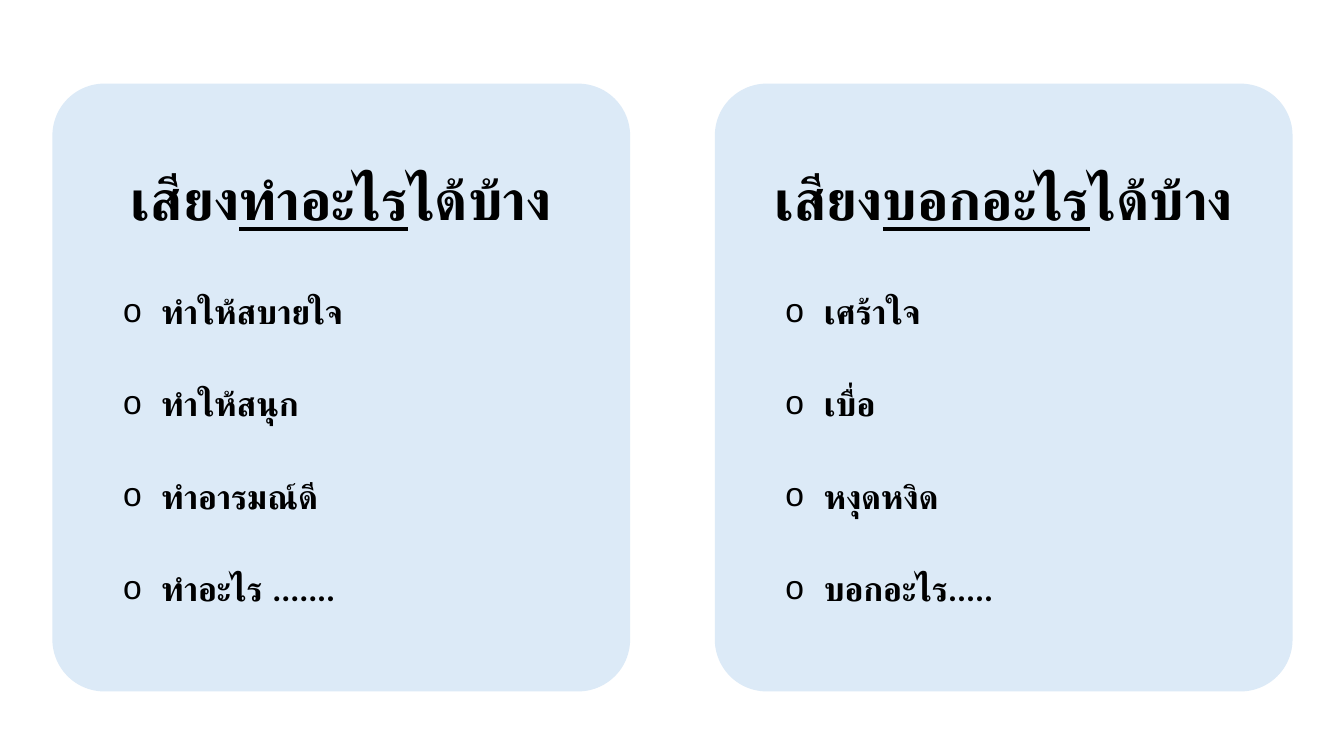
from dataclasses import dataclass

from lxml.etree import SubElement
from pptx import Presentation
from pptx.dml.color import RGBColor
from pptx.enum.shapes import MSO_SHAPE as Preset
from pptx.enum.text import MSO_ANCHOR as Anchor, MSO_AUTO_SIZE as AutoSize, PP_ALIGN as Align
from pptx.oxml.ns import qn
from pptx.util import Inches, Pt


@dataclass(frozen=True)
class Theme:
    card: RGBColor = RGBColor(0xDC, 0xEA, 0xF7)
    ink: RGBColor = RGBColor(0, 0, 0)
    font: str = "Calibri"
    heading_size: Pt = Pt(40)
    item_size: Pt = Pt(24)


THEME = Theme()
CARD_TOP, CARD_WIDTH, CARD_HEIGHT = Inches(0.83), Inches(5.73), Inches(6.03)
LIST_INSET = Inches(0.6)
HANGING = Inches(0.38)

COLUMNS = (
    {
        "left": Inches(0.52),
        "heading_idx": 0,
        "list_idx": 2,
        "heading": ("เสียง", "ทำอะไร", "ได้บ้าง"),
        "items": ("ทำให้สบายใจ", "ทำให้สนุก", "ทำอารมณ์ดี", "ทำอะไร ......."),
    },
    {
        "left": Inches(7.09),
        "heading_idx": 3,
        "list_idx": 4,
        "heading": ("เสียง", "บอกอะไร", "ได้บ้าง"),
        "items": ("เศร้าใจ", "เบื่อ", "หงุดหงิด", "บอกอะไร....."),
    },
)


def apply(target, values):
    for name, value in values.items():
        setattr(target, name, value)


def write_run(paragraph, text, size, underline=False):
    run = paragraph.add_run()
    run.text = text
    apply(run.font, {"name": THEME.font, "size": size, "bold": True, "underline": underline})
    run.font.color.rgb = THEME.ink


def place(holder, left, top, width, height, anchor):
    apply(holder, {"left": left, "top": top, "width": width, "height": height})
    apply(holder.text_frame, {
        "auto_size": AutoSize.NONE, "vertical_anchor": anchor, "word_wrap": True,
    })
    return holder.text_frame


def add_card(slide, left):
    card = slide.shapes.add_shape(Preset.ROUNDED_RECTANGLE, left, CARD_TOP, CARD_WIDTH, CARD_HEIGHT)
    card.adjustments[0] = 0.09
    card.shadow.inherit = False
    card.fill.solid()
    card.fill.fore_color.rgb = THEME.card
    card.line.fill.background()
    slide.shapes._spTree.insert(2, card._element)


def fill_heading(holder, left, parts):
    frame = place(holder, left, Inches(1.2), CARD_WIDTH, Inches(1.62), Anchor.MIDDLE)
    paragraph = frame.paragraphs[0]
    apply(paragraph, {"alignment": Align.CENTER, "line_spacing": 0.9, "space_before": Pt(0)})
    for position, part in enumerate(parts):
        write_run(paragraph, part, THEME.heading_size, underline=position == 1)


def fill_list(holder, left, items):
    frame = place(holder, left + LIST_INSET, Inches(2.91), Inches(3.79), Inches(3.21), Anchor.TOP)
    for position, item in enumerate(items):
        paragraph = frame.add_paragraph() if position else frame.paragraphs[0]
        apply(paragraph, {"line_spacing": 0.8, "space_before": Pt(43 if position else 10)})
        properties = paragraph._p.get_or_add_pPr()
        properties.set("marL", str(HANGING))
        properties.set("indent", str(-HANGING))
        SubElement(properties, qn("a:buChar"), char="o")
        write_run(paragraph, item, THEME.item_size)


def main():
    deck = Presentation()
    apply(deck, {"slide_width": Inches(13.33), "slide_height": Inches(7.5)})
    slide = deck.slides.add_slide(deck.slide_layouts.get_by_name("Comparison"))
    holders = {holder.placeholder_format.idx: holder for holder in slide.placeholders}
    for column in COLUMNS:
        add_card(slide, column["left"])
        fill_heading(holders[column["heading_idx"]], column["left"], column["heading"])
        fill_list(holders[column["list_idx"]], column["left"], column["items"])
    unused = holders[1]._element
    unused.getparent().remove(unused)
    deck.save("out.pptx")


if __name__ == "__main__":
    main()
